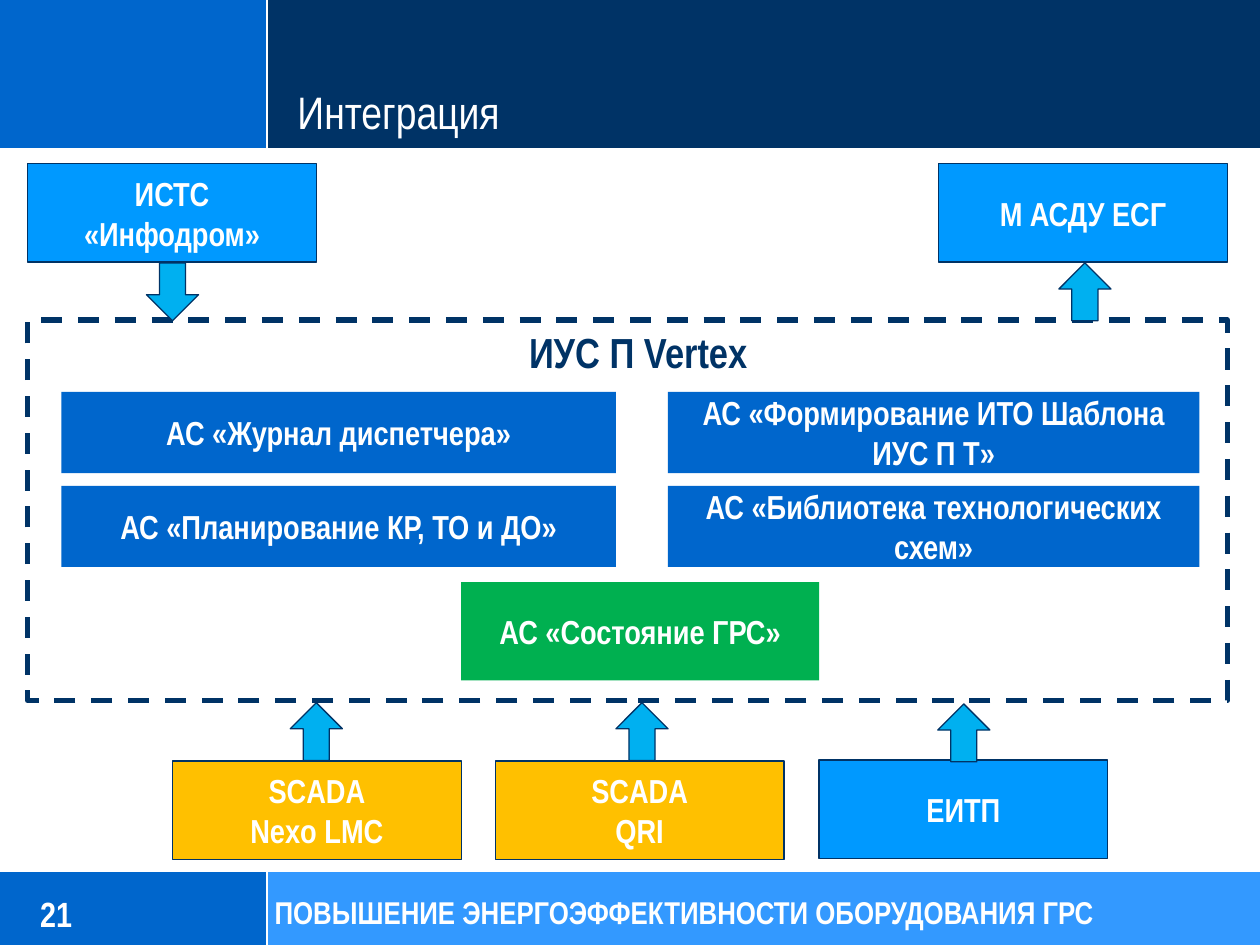
"""Build the integration slide for the gas distribution station presentation."""
import pptx
import pptx.dml.color
import pptx.enum.dml
import pptx.enum.shapes
import pptx.enum.text
import pptx.util
from lxml import etree

Pt = pptx.util.Pt
Shape = pptx.enum.shapes.MSO_SHAPE
Align = pptx.enum.text.PP_ALIGN
Anchor = pptx.enum.text.MSO_ANCHOR
AutoSize = pptx.enum.text.MSO_AUTO_SIZE

WHITE, NAVY, BLUE, LIGHT = "FFFFFF", "003366", "0066CC", "3399FF"
SKY, AMBER, GREEN, CYAN = "0099FF", "FFC000", "00B050", "00B0F0"


def color(value):
    return pptx.dml.color.RGBColor.from_string(value)


def apply(target, values):
    for name, value in values.items():
        setattr(target, name, value)


class SlideBuilder:
    def __init__(self, slide, font_name):
        self.slide = slide
        self.font_name = font_name

    def place(self, shape, left, top, width, height):
        box = {"left": left, "top": top, "width": width, "height": height}
        apply(shape, {name: Pt(value) for name, value in box.items()})

    def set_text(self, shape, text, size, ink=WHITE, bold=True, align=Align.LEFT, spacing=None, **frame_format):
        frame = shape.text_frame
        apply(frame, {"text": text, "word_wrap": True} | frame_format)
        for paragraph in frame.paragraphs:
            apply(paragraph, {"alignment": align, "line_spacing": spacing})
            for run in paragraph.runs:
                apply(run.font, {"name": self.font_name, "size": Pt(size), "bold": bold})
                run.font.color.rgb = color(ink)

    def title(self, text, *box):
        shape = self.slide.shapes.title
        self.place(shape, *box)
        margins = dict.fromkeys(("margin_left", "margin_top", "margin_right", "margin_bottom"), 0)
        self.set_text(shape, text, 26, bold=False, vertical_anchor=Anchor.BOTTOM,
                      auto_size=AutoSize.NONE, **margins)
        shape.element.getparent().append(shape.element)

    def shape(self, kind, box, fill=None, outline=None, weight=0.75):
        shape = self.slide.shapes.add_shape(kind, *map(Pt, box))
        shape.shadow.inherit = False
        if fill:
            shape.fill.solid()
            shape.fill.fore_color.rgb = color(fill)
        else:
            shape.fill.background()
        if outline:
            shape.line.color.rgb = color(outline)
            shape.line.width = Pt(weight)
        else:
            shape.line.fill.background()
        return shape

    def box(self, text, box, fill, outline=None):
        shape = self.shape(Shape.RECTANGLE, box, fill, outline)
        self.set_text(shape, text, 19, align=Align.CENTER, vertical_anchor=Anchor.MIDDLE,
                      margin_left=Pt(17), margin_right=Pt(17), margin_top=0, margin_bottom=0)

    def frame(self, *box):
        shape = self.shape(Shape.RECTANGLE, box, outline=NAVY, weight=3)
        shape.line.dash_style = pptx.enum.dml.MSO_LINE.DASH

    def arrow(self, left, top, rotation):
        shape = self.shape(Shape.RIGHT_ARROW, (left, top, 33.1, 29.8), CYAN, NAVY)
        shape.rotation = rotation

    def line(self, *ends):
        connector = self.slide.shapes.add_connector(
            pptx.enum.shapes.MSO_CONNECTOR.STRAIGHT, *map(Pt, ends))
        connector.line.color.rgb = color(WHITE)
        connector.line.width = Pt(1.25)
        namespace = "{http://schemas.openxmlformats.org/drawingml/2006/main}"
        etree.SubElement(connector.element.spPr, namespace + "effectLst")

    def label(self, text, box, size, **text_format):
        self.set_text(self.slide.shapes.add_textbox(*map(Pt, box)), text, size, **text_format)


def main():
    presentation = pptx.Presentation()
    width, height = 720, 540
    apply(presentation, {"slide_width": Pt(width), "slide_height": Pt(height)})
    slide = presentation.slides.add_slide(presentation.slide_layouts[5])
    builder = SlideBuilder(slide, "Arial Narrow")

    divider, header, footer = 152.6, 85, 497.5
    for top, bottom, fill in ((footer, height, LIGHT), (0, header, NAVY)):
        builder.shape(Shape.RECTANGLE, (0, top, divider, bottom - top), BLUE)
        builder.shape(Shape.RECTANGLE, (divider, top, width - divider, bottom - top), fill)
        builder.line(divider, top, divider, bottom)
    for edge in (footer, header):
        builder.line(0, edge, width, edge)
    builder.title("Интеграция", 170, 0, 550, 79.2)

    for text, left, top, fill in (
        ("ИСТС «Инфодром»", 15.8, 93.6, SKY),
        ("М АСДУ ЕСГ", 536.4, 93.6, SKY),
        ("SCADA\nNexo LMC", 98.6, 434.9, AMBER),
        ("SCADA\nQRI", 283, 434.9, AMBER),
        ("ЕИТП", 468, 434.2, SKY),
    ):
        builder.box(text, (left, top, 165, 56.2), fill, NAVY)

    columns = (
        (35, 317, ("АС «Журнал диспетчера»", "АС «Планирование КР, ТО и ДО»")),
        (381.6, 303.8, ("АС «Формирование ИТО Шаблона ИУС П Т»",
                        "АС «Библиотека технологических схем»")),
    )
    for left, box_width, texts in columns:
        for row, text in enumerate(texts):
            builder.box(text, (left, 224 + 53.6 * row, box_width, 46.4), BLUE)

    builder.frame(15.8, 182.9, 685.6, 217.4)
    builder.box("АС «Состояние ГРС»", (263.5, 332.6, 204.6, 56.2), GREEN)
    builder.label("ИУС П Vertex", (295.2, 182.9, 143.3, 36.7), 24, ink=NAVY, word_wrap=False)

    for left, top, rotation in ((82, 151.9, 90), (603.4, 151.9, 270), (164.2, 403.2, 270),
                                (350.3, 403.2, 270), (534.2, 403.9, 270)):
        builder.arrow(left, top, rotation)

    builder.label("21", (15.8, 504.7, 121, 31), 20, spacing=1.07)
    builder.label("ПОВЫШЕНИЕ ЭНЕРГОЭФФЕКТИВНОСТИ ОБОРУДОВАНИЯ ГРС",
                  (149.8, 505.4, 556.6, 31), 18, spacing=1.07)
    presentation.save("out.pptx")


if __name__ == "__main__":
    main()
